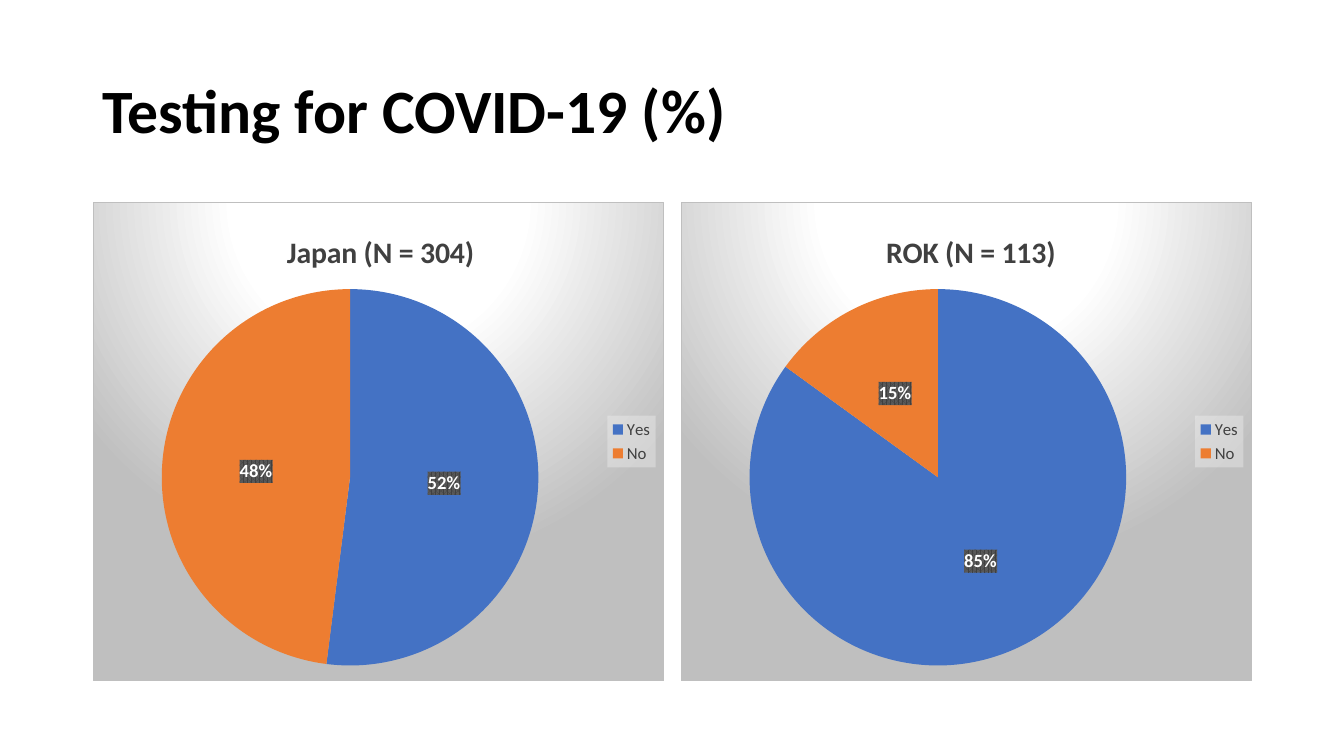
from dataclasses import dataclass

from lxml import etree
from pptx import Presentation, util as u
from pptx.chart.data import CategoryChartData
from pptx.dml.color import RGBColor
from pptx.enum import chart as charts, text
from pptx.oxml.ns import nsdecls, qn


@dataclass(frozen=True)
class Theme:
    font: str = "Calibri"
    black: str = "000000"
    white: str = "FFFFFF"
    dark: str = "404040"
    stripe: str = "595959"
    edge: str = "BFBFBF"
    legend: str = "F2F2F2"
    slices: tuple = ("4472C4", "ED7D31")
    heading: float = 44
    chart_title: float = 21.3
    label: float = 13.3
    legend_size: float = 12


THEME = Theme()
WIDTH, HEIGHT = 13.33, 7.5
LEFT, GAP, PANEL_WIDTH = 0.92, 0.16, 5.67
ANSWERS = ("Yes", "No")
# Chart title, its left edge as a share of the chart, percentages
COUNTRIES = (
    ("Japan (N = 304)", 0.33, (52, 48)),
    ("ROK (N = 113)", 0.35, (85, 15)),
)


def style(font, size, color, bold=False):
    font.name, font.size, font.bold = THEME.font, u.Pt(size), bold
    font.color.rgb = RGBColor.from_string(color)


def color_xml(color, extra=""):
    return f'<a:srgbClr val="{color}">{extra}</a:srgbClr>'


def shape_properties(content):
    return etree.fromstring(f'<c:spPr {nsdecls("c", "a")}>{content}</c:spPr>')


def set_layout(parent, position, **shares):
    """Place a chart part by shares of the chart's size."""
    for old in parent.findall(qn("c:layout")):
        parent.remove(old)
    layout = etree.Element(qn("c:layout"))
    manual = etree.SubElement(layout, qn("c:manualLayout"))
    if "w" in shares:
        etree.SubElement(manual, qn("c:layoutTarget"), val="inner")
    for axis in "xy":
        etree.SubElement(manual, qn(f"c:{axis}Mode"), val="edge")
    for name, share in shares.items():
        etree.SubElement(manual, qn(f"c:{name}"), val=str(share))
    parent.insert(position, layout)


def add_backdrop(chart):
    stops = "".join(
        f'<a:gs pos="{share * 1000}">{color_xml(color)}</a:gs>'
        for share, color in ((0, THEME.white), (39, THEME.white), (100, THEME.edge))
    )
    backdrop = shape_properties(
        f'<a:gradFill><a:gsLst>{stops}</a:gsLst><a:path path="circle">'
        '<a:fillToRect l="50000" t="-80000" r="50000" b="180000"/></a:path></a:gradFill>'
        f'<a:ln w="{u.Pt(0.75)}"><a:solidFill>{color_xml(THEME.edge)}</a:solidFill></a:ln>'
    )
    chart._chartSpace.find(qn("c:chart")).addnext(backdrop)


def add_heading(slide, box, wording):
    heading = slide.shapes.add_textbox(*map(u.Inches, box)).text_frame
    heading.word_wrap = True
    heading.vertical_anchor = text.MSO_ANCHOR.MIDDLE
    heading.text = wording
    heading.paragraphs[0].line_spacing = 0.9
    style(heading.paragraphs[0].runs[0].font, THEME.heading, THEME.black, True)


def add_legend(chart):
    chart.has_legend = True
    legend = chart.legend
    legend.position = charts.XL_LEGEND_POSITION.RIGHT
    legend.include_in_layout = False
    style(legend.font, THEME.legend_size, THEME.dark)
    tint = color_xml(THEME.legend, '<a:alpha val="39000"/>')
    legend._element.find(qn("c:txPr")).addprevious(
        shape_properties(f"<a:solidFill>{tint}</a:solidFill>"))


def add_labels(series):
    labels = series.data_labels
    labels.show_percentage, labels.show_value = True, False
    labels.number_format, labels.number_format_is_linked = "0%", False
    labels.position = charts.XL_LABEL_POSITION.CENTER
    style(labels.font, THEME.label, THEME.white, True)
    labels._element.find(qn("c:dLbls")).find(qn("c:txPr")).addprevious(
        shape_properties(
            f'<a:pattFill prst="pct75"><a:fgClr>{color_xml(THEME.dark)}</a:fgClr>'
            f"<a:bgClr>{color_xml(THEME.stripe)}</a:bgClr></a:pattFill>"
        )
    ) if labels._element.find(qn("c:dLbls")) is not None else labels._element.find(
        qn("c:txPr")).addprevious(
        shape_properties(
            f'<a:pattFill prst="pct75"><a:fgClr>{color_xml(THEME.dark)}</a:fgClr>'
            f"<a:bgClr>{color_xml(THEME.stripe)}</a:bgClr></a:pattFill>"
        )
    )


def add_country_pie(slide, box, title, title_left, shares):
    data = CategoryChartData()
    data.categories = ANSWERS
    data.add_series("Series 1", shares)
    chart = slide.shapes.add_chart(
        charts.XL_CHART_TYPE.PIE, *map(u.Inches, box), data).chart
    style(chart.font, 10, THEME.black)
    add_backdrop(chart)

    chart.has_title = True
    chart.chart_title.text_frame.text = title
    style(chart.chart_title.text_frame.paragraphs[0].runs[0].font,
          THEME.chart_title, THEME.dark, True)
    set_layout(chart.chart_title._element, 1, x=title_left, y=0.05)
    plot_area = chart._chartSpace.find(qn("c:chart")).find(qn("c:plotArea"))
    set_layout(plot_area, 0, x=0.12, y=0.18, w=0.66, h=0.79)

    add_legend(chart)
    chart.plots[0].vary_by_categories = True
    series = chart.plots[0].series[0]
    for index, color in enumerate(THEME.slices):
        slice_format = series.points[index].format
        slice_format.fill.solid()
        slice_format.fill.fore_color.rgb = RGBColor.from_string(color)
        slice_format.line.fill.background()
    add_labels(series)


def add_comparison_slide(deck):
    slide = deck.slides.add_slide(deck.slide_layouts[6])
    add_heading(slide, (LEFT, 0.4, 2 * PANEL_WIDTH + GAP, 1.45),
                "Testing for COVID-19 (%)")
    for column, country in enumerate(COUNTRIES):
        left = LEFT + column * (PANEL_WIDTH + GAP)
        add_country_pie(slide, (left, 2, PANEL_WIDTH, 4.76), *country)


def main():
    deck = Presentation()
    deck.slide_width, deck.slide_height = u.Inches(WIDTH), u.Inches(HEIGHT)
    add_comparison_slide(deck)
    deck.save("out.pptx")


if __name__ == "__main__":
    main()
